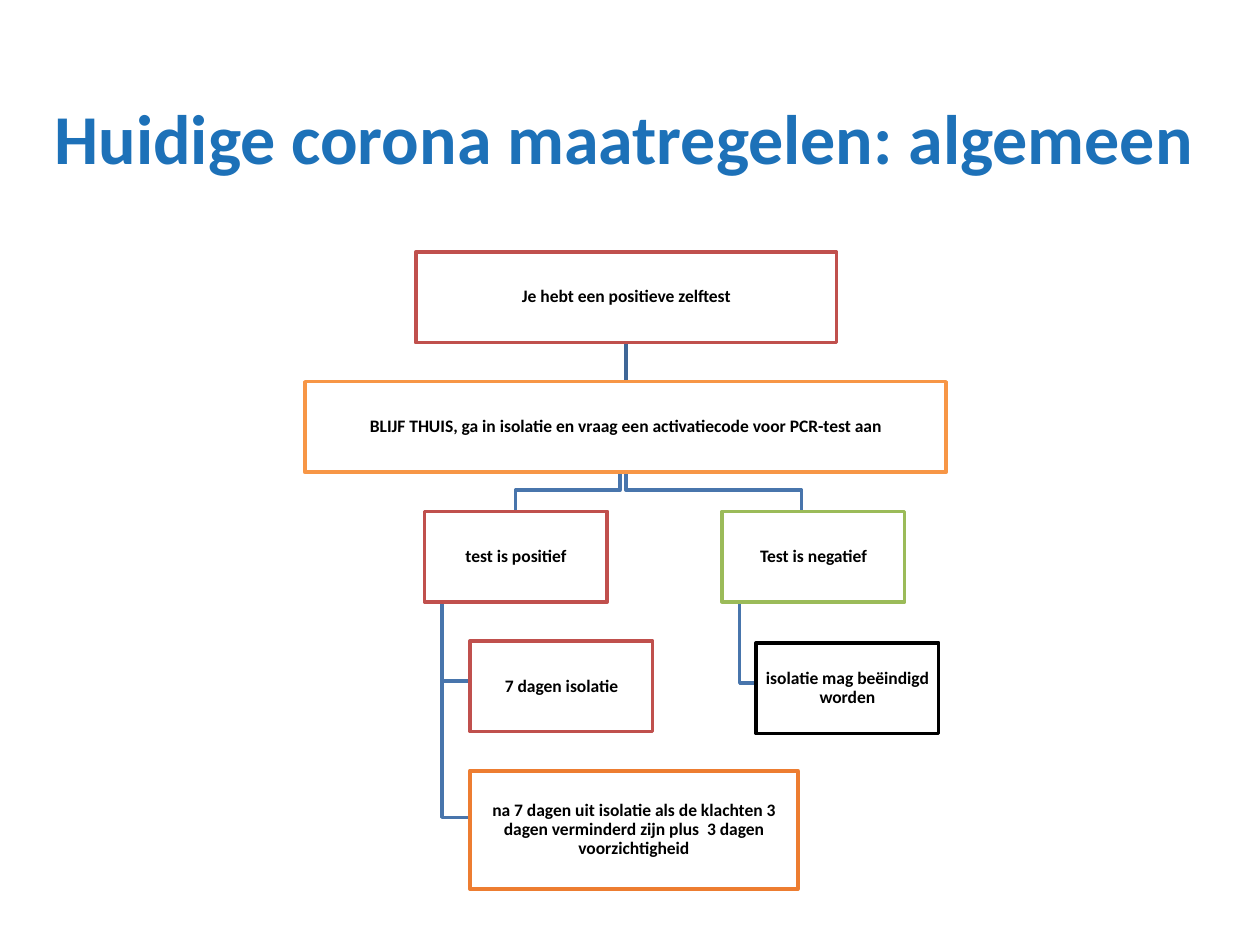
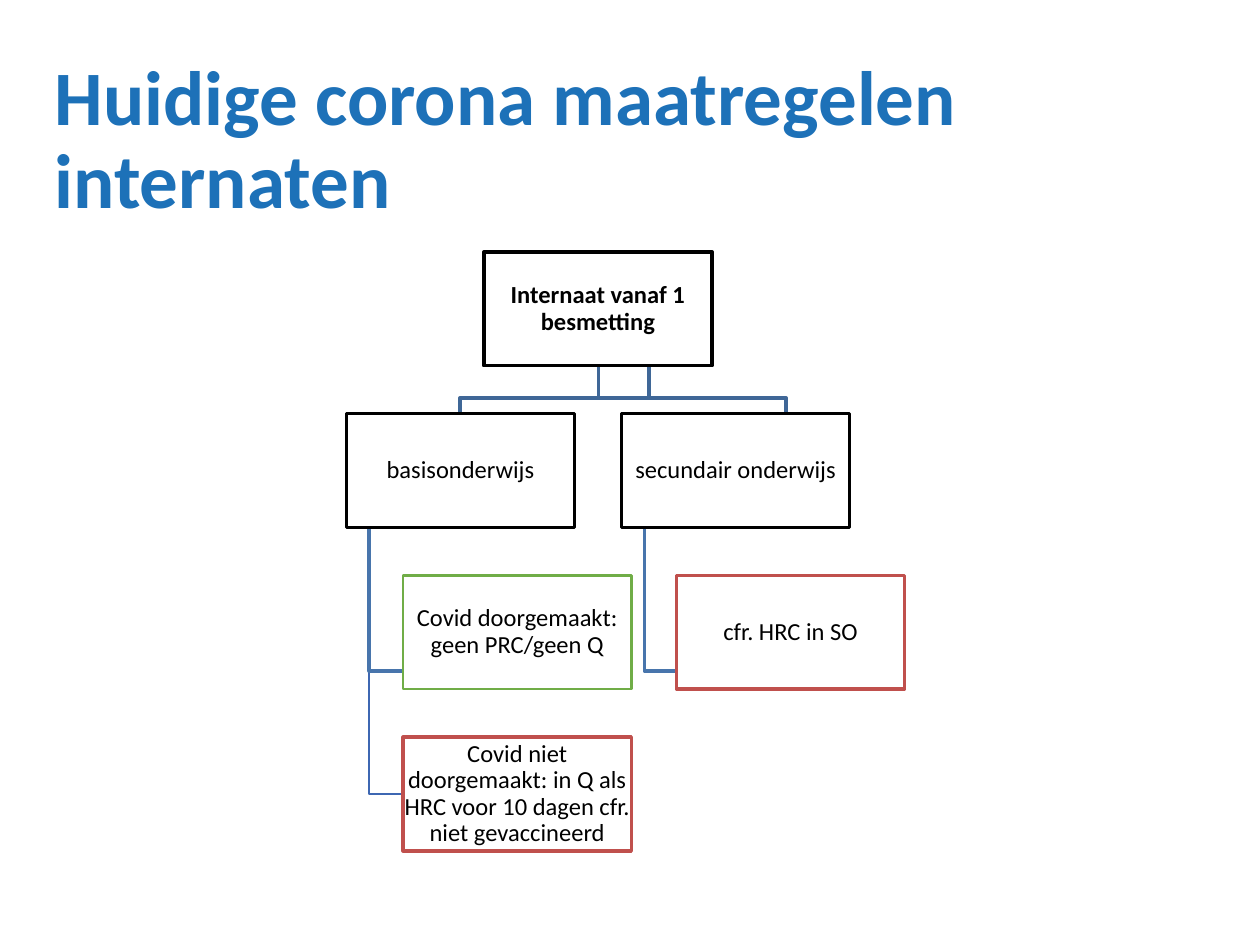
from lxml.etree import SubElement
from pptx import Presentation
from pptx.dml.color import RGBColor
from pptx.enum.shapes import MSO_CONNECTOR as Connector, MSO_SHAPE as Shape
from pptx.enum.text import MSO_ANCHOR as Anchor, MSO_AUTO_SIZE as AutoSize, PP_ALIGN as Align
from pptx.oxml.ns import qn
from pptx.util import Pt

BLUE, BLACK, WHITE = "1D71B8", "000000", "FFFFFF"
RED, GREEN, LIME, ORANGE, AMBER = "C0504D", "70AD47", "9BBB59", "ED7D31", "F79646"
STEEL, NAVY, ROYAL = "4875AC", "3F6797", "3E67B2"
TOP = 144
TITLE_AREA = (24, 28.8, 669, 104.4)
TITLE_ONLY = 5

# boxes: key -> (text, left, row, border, overrides)
# stems: (parent, child, colour)
# forks: (parent, child, start x, bar y, end x, colour)
# hooks: (parent, child, depth below child top, colour, width)
SLIDES = [
    dict(
        title="Huidige corona maatregelen: algemeen", title_size=40,
        text_size=10, box_size=(104.4, 51.8), pitch=74.1, hook_indent=10.1,
        boxes={
            "zelftest": ("Je hebt een positieve zelftest", 237.6, 0, RED,
                         dict(width=240.5, bold=True)),
            "thuis": ("BLIJF THUIS, ga in isolatie en vraag een activatiecode voor PCR-test aan",
                      174.2, 1, AMBER, dict(width=366.5, bold=True)),
            "positief": ("test is positief", 242.6, 2, RED, dict(bold=True)),
            "isolatie": ("7 dagen isolatie", 268.6, 3, RED, dict(bold=True)),
            "na": ("na 7 dagen uit isolatie als de klachten 3 dagen verminderd zijn "
                   "plus  3 dagen voorzichtigheid", 268.6, 4, ORANGE,
                   dict(width=187.2, height=67.7, line=2.25, bold=True)),
            "negatief": ("Test is negatief", 412.6, 2, LIME, dict(bold=True)),
            "einde": ("isolatie mag beëindigd worden", 432, 3, BLACK,
                      dict(shift=1, bold=True)),
        },
        stems=[("zelftest", "thuis", NAVY)],
        forks=[("thuis", "negatief", 357.8, 280.1, 458, STEEL),
               ("thuis", "positief", 354.2, 280.1, 294.6, STEEL)],
        hooks=[("negatief", "einde", 23, STEEL, 2), ("positief", "na", 26.6, STEEL, 2),
               ("positief", "isolatie", 23, STEEL, 2)],
    ),
    dict(
        title="Huidige corona maatregelen internaten", title_size=44,
        text_size=14, box_size=(130.4, 65), pitch=92.4, hook_indent=13,
        boxes={
            "internaat": ("Internaat vanaf 1 besmetting", 276.5, 0, BLACK, dict(bold=True)),
            "basis": ("basisonderwijs", 198, 1, BLACK, {}),
            "doorgemaakt": ("Covid doorgemaakt: geen PRC/geen Q", 230.4, 2, GREEN,
                            dict(line=1.5)),
            "niet": ("Covid niet doorgemaakt: in Q als HRC voor 10 dagen cfr. "
                     "niet gevaccineerd", 230.4, 3, RED, {}),
            "secundair": ("secundair onderwijs", 355.2, 1, BLACK, {}),
            "hrc": ("cfr. HRC in SO", 386.6, 2, RED, {}),
        },
        stems=[],
        forks=[("internaat", "secundair", 342, 227.5, 449.3, NAVY),
               ("internaat", "basis", 370.8, 227.5, 262.8, NAVY)],
        hooks=[("secundair", "hrc", 54.7, STEEL, 2), ("basis", "niet", 32.4, ROYAL, 1),
               ("basis", "doorgemaakt", 54.7, STEEL, 2)],
    ),
]


def rgb(colour):
    return RGBColor.from_string(colour)


def write(shape, text, *, size, colour=BLACK, bold=False, align=Align.CENTER, inset=0.72):
    frame = shape.text_frame
    frame.word_wrap = True
    frame.auto_size = AutoSize.NONE
    frame.vertical_anchor = Anchor.MIDDLE
    frame.margin_left = frame.margin_right = Pt(inset)
    frame.margin_top = frame.margin_bottom = Pt(inset)
    paragraph = frame.paragraphs[0]
    paragraph.alignment = align
    paragraph.line_spacing = 0.9
    run = paragraph.add_run()
    run.text = text
    font = run.font
    font.name, font.size, font.bold = "Calibri", Pt(size), bold
    font.color.rgb = rgb(colour)


def set_line(shape, colour, width):
    shape.line.color.rgb = rgb(colour)
    shape.line.width = Pt(width)


def add_stem(slide, x, top, bottom, colour):
    stem = slide.shapes.add_connector(Connector.STRAIGHT, Pt(x), Pt(top), Pt(x), Pt(bottom))
    SubElement(stem._element.spPr, qn("a:effectLst"))
    set_line(stem, colour, 2)


def add_bent_line(slide, points, colour, width=2):
    start, *corners = [(Pt(x), Pt(y)) for x, y in points]
    builder = slide.shapes.build_freeform(*start)
    builder.add_line_segments(corners, close=False)
    bend = builder.convert_to_shape()
    bend.fill.background()
    bend.shadow.inherit = False
    set_line(bend, colour, width)


def add_title(slide, text, size):
    title = slide.shapes.title
    title.left, title.top, title.width, title.height = map(Pt, TITLE_AREA)
    write(title, text, size=size, colour=BLUE, bold=True, align=Align.LEFT, inset=7.2)


def add_box(slide, area, text, border, line, **text_format):
    box = slide.shapes.add_shape(Shape.RECTANGLE, *map(Pt, area))
    box.shadow.inherit = False
    box.fill.solid()
    box.fill.fore_color.rgb = rgb(WHITE)
    set_line(box, border, line)
    write(box, text, **text_format)


def box_areas(chart):
    """Left, top, width and height of every box, by key."""
    width, height = chart["box_size"]
    return {
        key: (left, TOP + row * chart["pitch"] + options.get("shift", 0),
              options.get("width", width), options.get("height", height))
        for key, (_, left, row, _, options) in chart["boxes"].items()
    }


def add_links(slide, chart, areas):
    def bottom(key):
        return areas[key][1] + areas[key][3]

    for parent, child, colour in chart["stems"]:
        left, _, width, _ = areas[parent]
        add_stem(slide, left + width / 2, bottom(parent), areas[child][1], colour)
    for parent, child, start, bar, end, colour in chart["forks"]:
        add_bent_line(slide, [(start, bottom(parent)), (start, bar), (end, bar),
                              (end, areas[child][1])], colour)
    for parent, child, depth, colour, width in chart["hooks"]:
        x = areas[parent][0] + chart["hook_indent"]
        child_left, child_top = areas[child][:2]
        y = child_top + depth
        add_bent_line(slide, [(x, bottom(parent)), (x, y), (child_left, y)], colour, width)


def main():
    deck = Presentation()
    deck.slide_width, deck.slide_height = Pt(720), Pt(540)
    for chart in SLIDES:
        slide = deck.slides.add_slide(deck.slide_layouts[TITLE_ONLY])
        add_title(slide, chart["title"], chart["title_size"])
        areas = box_areas(chart)
        add_links(slide, chart, areas)
        for key, (text, _, _, border, options) in chart["boxes"].items():
            add_box(slide, areas[key], text, border, options.get("line", 2),
                    size=chart["text_size"], bold=options.get("bold", False))
    deck.save("out.pptx")


if __name__ == "__main__":
    main()
